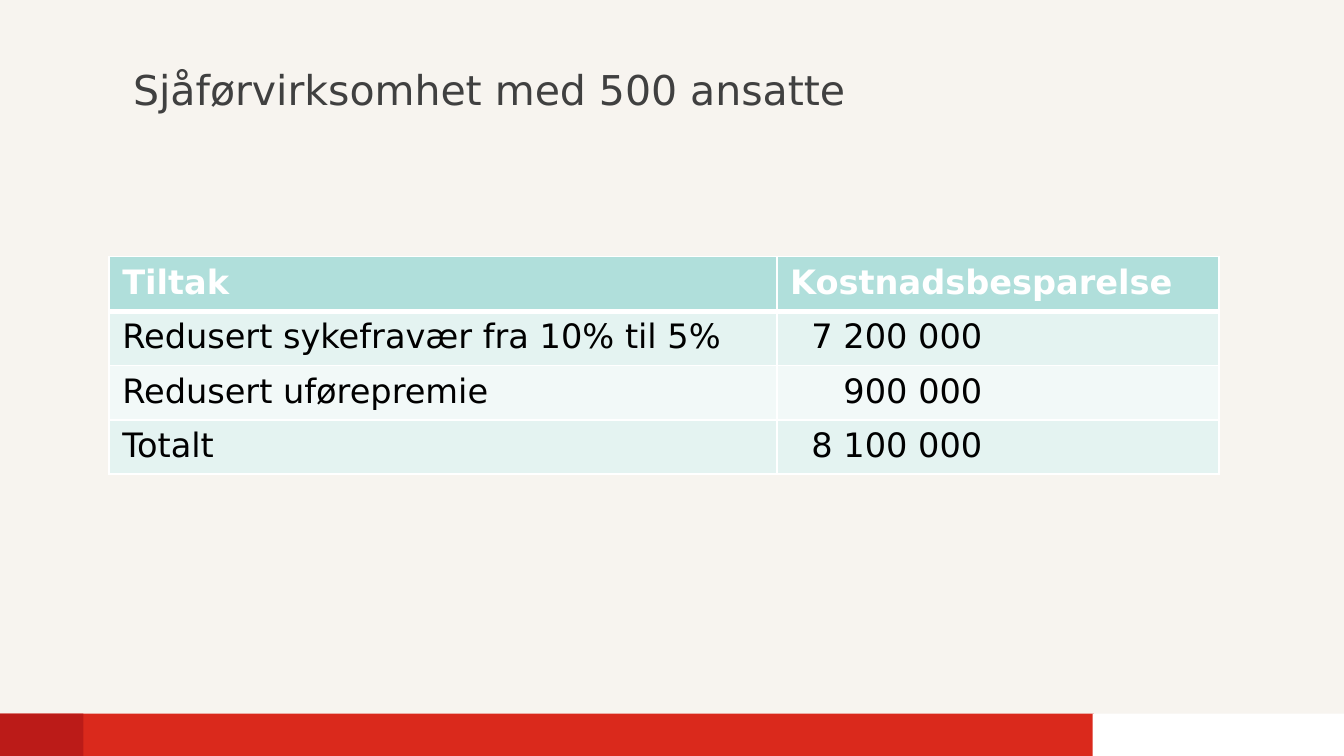
from lxml import etree
from pptx import Presentation
from pptx.dml.color import RGBColor
from pptx.enum.shapes import MSO_SHAPE
from pptx.enum.text import PP_ALIGN
from pptx.oxml.ns import qn
from pptx.util import Inches, Pt

RECT = MSO_SHAPE.RECTANGLE
LEFT, RIGHT = PP_ALIGN.LEFT, PP_ALIGN.RIGHT
FONT = "DejaVu Sans"
COLORS = {
    "background": "F7F4EF",
    "red": "DA291C",
    "dark_red": "BB1B18",
    "white": "FFFFFF",
    "title": "404040",
    "black": "000000",
    "header": "B0DFDB",
    "odd_row": "E4F3F1",
    "even_row": "F2F9F8",
}


def rgb(name):
    return RGBColor.from_string(COLORS[name])


def write(tf, text, size=18, color="black", bold=False, align=LEFT):
    p = tf.paragraphs[0]
    p.alignment = align
    r = p.add_run()
    r.text = text
    r.font.name = FONT
    r.font.size = Pt(size)
    r.font.bold = bold
    r.font.color.rgb = rgb(color)


def set_borders(cell, **widths):
    """Draw white borders; the widths are points for L, R, T and B."""
    tc_pr = cell._tc.get_or_add_tcPr()
    for side, width in widths.items():
        ln = etree.SubElement(tc_pr, qn(f"a:ln{side}"), w=str(Pt(width)))
        fill = etree.SubElement(ln, qn("a:solidFill"))
        etree.SubElement(fill, qn("a:srgbClr"), val=COLORS["white"])


class SlideBuilder:
    def __init__(self, prs):
        self.height = prs.slide_height
        self.s = prs.slides.add_slide(prs.slide_layouts[6])
        fill = self.s.background.fill
        fill.solid()
        fill.fore_color.rgb = rgb("background")

    def footer_bar(self, left, top, width, color):
        """Draw a bar that reaches down to the slide's bottom edge."""
        sp = self.s.shapes.add_shape(
            RECT, Inches(left), Inches(top), Inches(width),
            self.height - Inches(top))
        sp.shadow.inherit = False
        sp.fill.solid()
        sp.fill.fore_color.rgb = rgb(color)
        sp.line.fill.background()

    def title(self, left, top, width, height, text):
        sp = self.s.shapes.add_textbox(
            Inches(left), Inches(top), Inches(width), Inches(height))
        tf = sp.text_frame
        tf.word_wrap = True
        tf.margin_left = tf.margin_right = tf.margin_top = tf.margin_bottom = 0
        write(tf, text, size=22, color="title")

    def table(self, left, top, col_widths, height, rows):
        table = self.s.shapes.add_table(
            len(rows), len(col_widths), Inches(left), Inches(top),
            Inches(sum(col_widths)), Inches(height)).table
        for col, width in zip(table.columns, col_widths):
            col.width = Inches(width)
        for i, row in enumerate(rows):
            for j, text in enumerate(row):
                self.cell(table.cell(i, j), text, i, is_amount=i > 0 and j == 1)

    def cell(self, cell, text, row, is_amount):
        is_header = row == 0
        # A thick rule separates the header from the body
        set_borders(cell, L=1, R=1, T=3 if row == 1 else 1, B=3 if is_header else 1)
        cell.fill.solid()
        band = "odd_row" if row % 2 else "even_row"
        cell.fill.fore_color.rgb = rgb("header" if is_header else band)
        if is_amount:
            cell.margin_right = Inches(1.76)
        write(cell.text_frame, text, bold=is_header,
              color="white" if is_header else "black",
              align=RIGHT if is_amount else LEFT)


def main():
    prs = Presentation()
    # Widescreen, 16:9
    prs.slide_width = Inches(10)
    prs.slide_height = Inches(10 * 9 / 16)
    slide = SlideBuilder(prs)

    # Footer band
    for left, width, color in [(0, 8.14, "red"), (8.13, 1.87, "white"),
                               (0, 0.62, "dark_red")]:
        slide.footer_bar(left, 5.31, width, color)

    # Title
    slide.title(0.99, 0.48, 8.88, 0.66, "Sjåførvirksomhet med 500 ansatte")

    # Savings per measure
    slide.table(0.81, 1.91, [4.97, 3.29], 1.62, [
        ("Tiltak", "Kostnadsbesparelse"),
        ("Redusert sykefravær fra 10% til 5%", "7 200 000"),
        ("Redusert uførepremie", "900 000"),
        ("Totalt", "8 100 000"),
    ])

    prs.save("out.pptx")


if __name__ == "__main__":
    main()
